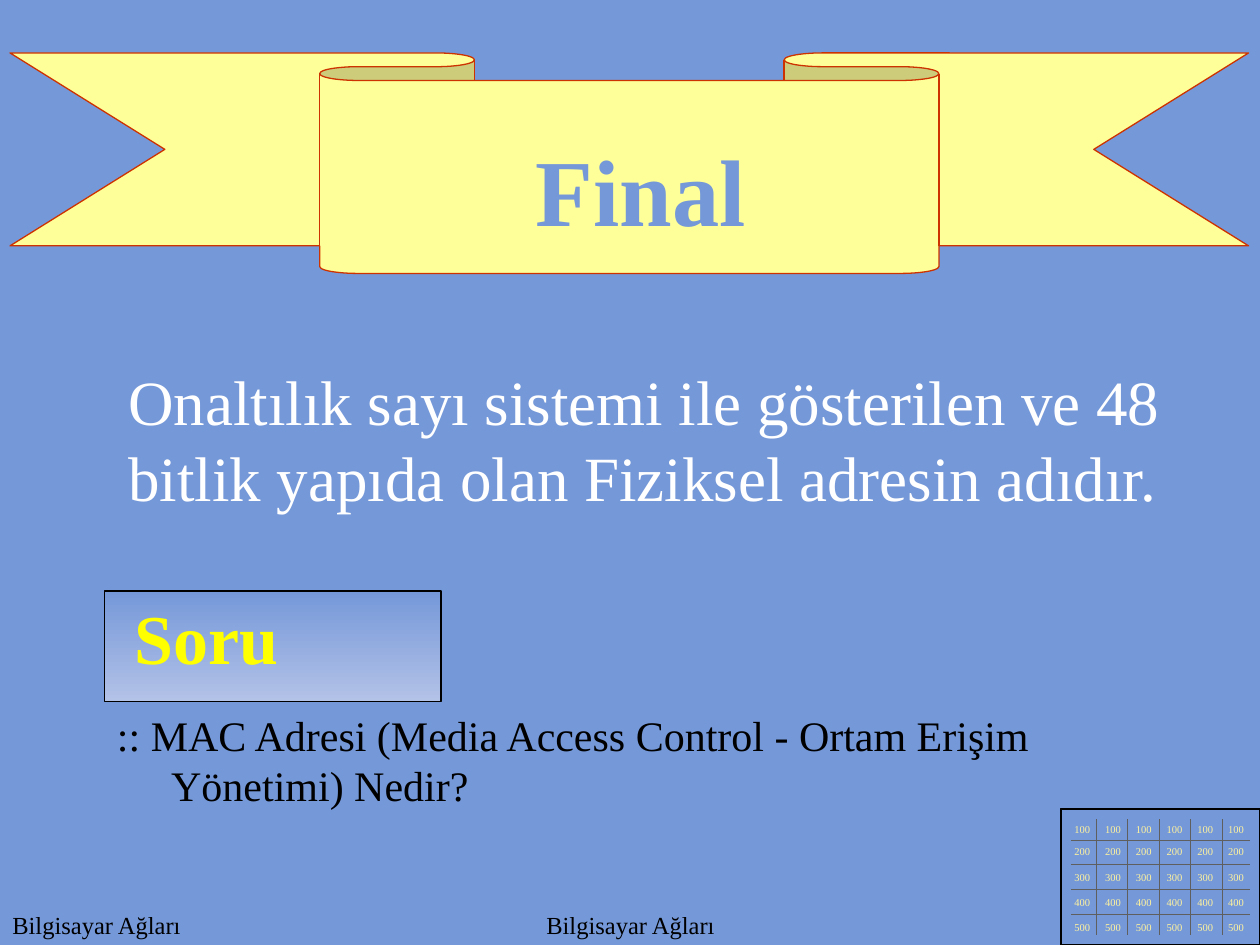
from lxml import etree
from pptx import Presentation
from pptx import util as u
from pptx.dml.color import RGBColor
from pptx.enum import shapes, text
from pptx.oxml.ns import qn

THEME = {
    "font": "Times New Roman",
    "color": {"blue": "7598D9", "pale_blue": "B3C2E7", "black": "000000",
              "white": "FFFFFF", "yellow": "FFFF00", "ribbon": "FFFF99",
              "red": "CC3300", "grid": "5F5F5F", "score": "FFF39D"},
    "size": {"title": 54, "label": 40, "clue": 36, "question": 24,
             "footer": 14, "score": 6},
    "line": 0.75,
}

# Content
TITLE = "Final"
CLUE = ("Onaltılık sayı sistemi ile gösterilen ve 48 bitlik yapıda olan "
        "Fiziksel adresin adıdır.")
LABEL = "Soru"
QUESTION = ":: MAC Adresi (Media Access Control - Ortam Erişim Yönetimi) Nedir?"
FOOTER = "Bilgisayar Ağları"
SCORE_ROWS = [("100", 6.53), ("200", 6.71), ("300", 6.91),
              ("400", 7.11), ("500", 7.31)]  # score, top
ROW_RULES = [6.67, 6.86, 7.06, 7.26]
COLUMNS = 6
BOARD = (8.42, 6.42, 1.58, 1.08)


def color(name):
    return RGBColor.from_string(THEME["color"][name])


def inches(*values):
    return [u.Inches(value) for value in values]


def add_text(parent, words, box, style, ink, bold=False, center=False,
             before=None, hanging=0, inset=None, grow=True):
    area = parent.add_textbox(*inches(*box))
    frame = area.text_frame
    frame.word_wrap = True
    if grow:
        frame.auto_size = text.MSO_AUTO_SIZE.SHAPE_TO_FIT_TEXT
    if inset is not None:
        frame.margin_left = frame.margin_right = u.Inches(inset)
        frame.margin_top = frame.margin_bottom = u.Inches(inset)
    paragraph = frame.paragraphs[0]
    paragraph.alignment = text.PP_ALIGN.CENTER if center else text.PP_ALIGN.LEFT
    properties = paragraph._p.get_or_add_pPr()
    if hanging:
        properties.set("marL", str(u.Inches(hanging)))
        properties.set("indent", str(-u.Inches(hanging)))
    if before:  # percentage of the line height
        space = etree.SubElement(properties, qn("a:spcBef"))
        etree.SubElement(space, qn("a:spcPct")).set("val", str(before * 1000))
    run = paragraph.add_run()
    run.text = words
    run.font.name = THEME["font"]
    run.font.size = u.Pt(THEME["size"][style])
    run.font.bold = bold
    run.font.color.rgb = color(ink)


def add_panel(parent, kind, box, outline, fill=None):
    panel = parent.add_shape(kind, *inches(*box))
    panel.shadow.inherit = False
    panel.line.color.rgb = color(outline)
    panel.line.width = u.Pt(THEME["line"])
    if fill:
        panel.fill.solid()
        panel.fill.fore_color.rgb = color(fill)
    else:
        panel.fill.background()
    return panel


def add_rule(parent, *ends):
    rule = parent.add_connector(shapes.MSO_CONNECTOR.STRAIGHT, *inches(*ends))
    rule.line.color.rgb = color("grid")
    rule.line.width = u.Pt(THEME["line"])
    etree.SubElement(rule._element.spPr, qn("a:effectLst"))


def add_label(slide):
    group = slide.shapes.add_group_shape().shapes
    button = add_panel(group, shapes.MSO_SHAPE.ACTION_BUTTON_CUSTOM,
                       (0.83, 4.69, 2.67, 0.88), "black")
    button.fill.gradient()
    button.fill.gradient_angle = 270
    for stop, name in zip(button.fill.gradient_stops, ("blue", "pale_blue")):
        stop.color.rgb = color(name)
    add_text(group, LABEL, (0.97, 4.67, 2.53, 0.77), "label", "yellow",
             bold=True, before=50)


def add_board(slide):
    group = slide.shapes.add_group_shape().shapes
    add_panel(group, shapes.MSO_SHAPE.ACTION_BUTTON_CUSTOM, BOARD, "black", "blue")
    for column in range(COLUMNS - 1):
        x = 8.7 + 0.25 * column
        add_rule(group, x, 6.5, x, 7.42)
    for y in ROW_RULES:
        add_rule(group, 8.5, y, 9.92, y)
    first, last = 8.52, 9.74
    for score, top in SCORE_ROWS:
        for column in range(COLUMNS):
            left = first + (last - first) * column / (COLUMNS - 1)
            add_text(group, score, (left, top, 0.14, 0.1), "score", "score",
                     center=True, inset=0)
    add_panel(slide.shapes, shapes.MSO_SHAPE.RECTANGLE, BOARD, "black")


def main():
    deck = Presentation()
    deck.slide_width, deck.slide_height = inches(10, 7.5)
    slide = deck.slides.add_slide(deck.slide_layouts[6])
    slide.background.fill.solid()
    slide.background.fill.fore_color.rgb = color("blue")

    # Left footer, question and clue
    add_text(slide.shapes, FOOTER, (0, 7.17, 10, 0.33), "footer", "black", grow=False)
    add_label(slide)
    add_text(slide.shapes, QUESTION, (0.83, 5.58, 8.25, 0.91), "question", "black",
             before=50, hanging=0.43)
    add_text(slide.shapes, CLUE, (0.92, 2.83, 8.72, 1.31), "clue", "white", before=50)

    # Title ribbon
    ribbon = add_panel(slide.shapes, shapes.MSO_SHAPE.DOWN_RIBBON,
                       (0.08, 0.42, 9.83, 1.75), "red", "ribbon")
    ribbon.adjustments[0], ribbon.adjustments[1] = 0.125, 0.5
    add_text(slide.shapes, TITLE, (0.92, 1, 8.33, 1.01), "title", "blue",
             bold=True, center=True, before=50)

    # Centre footer and score board
    add_text(slide.shapes, FOOTER, (1.67, 7.17, 6.67, 0.33), "footer", "black",
             center=True, grow=False)
    add_board(slide)
    deck.save("out.pptx")


if __name__ == "__main__":
    main()
